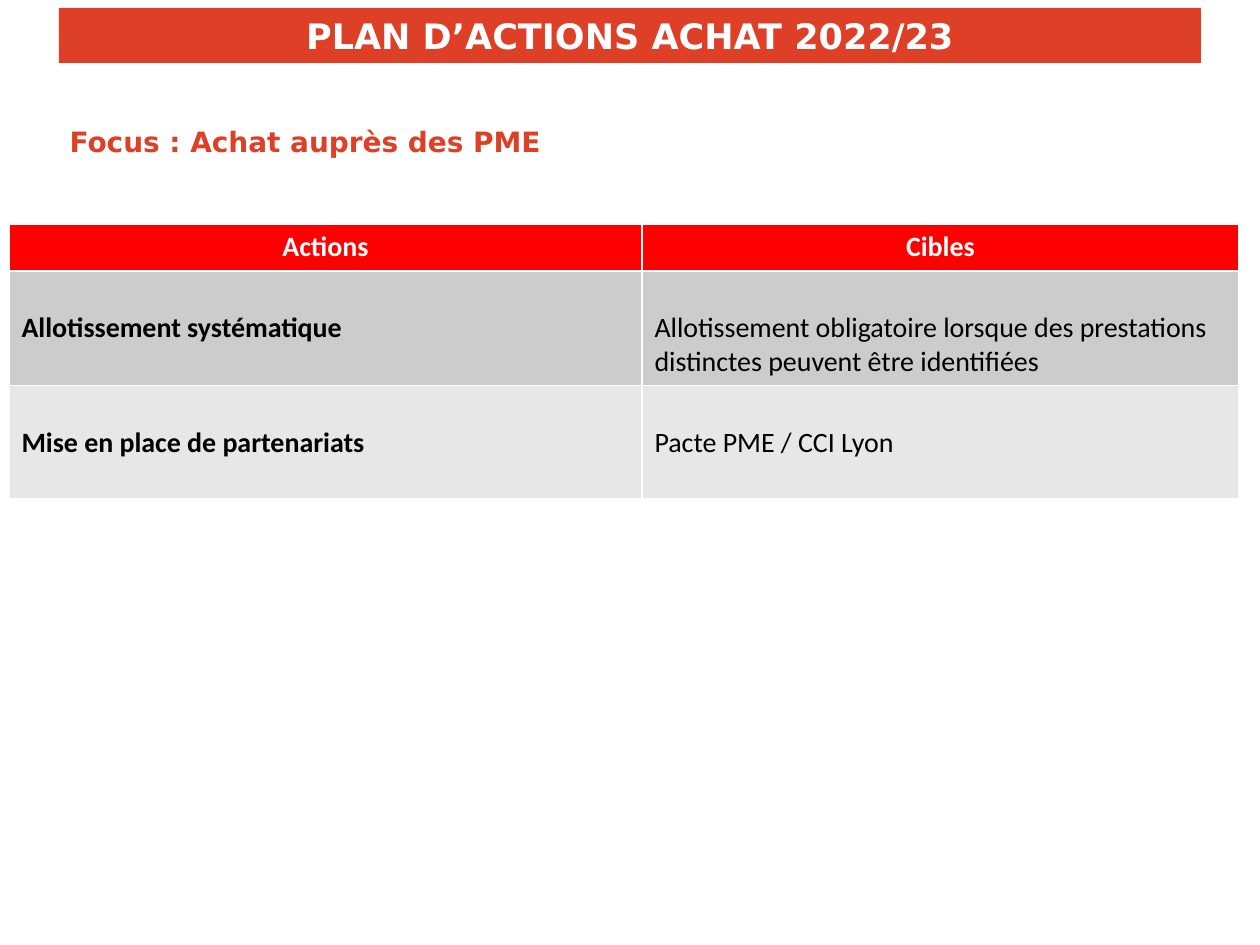
from pptx import Presentation
from pptx import util as u
from pptx.dml.color import RGBColor
from pptx.enum import text
from lxml import etree

# Content
TITLE = "PLAN D’ACTIONS ACHAT 2022/23"
FOCUS = "Focus : Achat auprès des PME"
ACTIONS = [
    ("Actions", "Cibles"),
    ("Allotissement systématique",
     "Allotissement obligatoire lorsque des prestations distinctes peuvent être identifiées"),
    ("Mise en place de partenariats", "Pacte PME / CCI Lyon"),
]

# Layout in px
PX = 914400 // 126
TITLE_BOX = (59, 8, 1142, 55)
FOCUS_BOX = (57, 67, 1134, 100)
FOCUS_OFFSET = 58
TABLE_LEFT, TABLE_TOP = 9, 224
COLUMN_WIDTHS = (633, 597)
ROW_HEIGHTS = (46, 114, 113)
BODY_OFFSET = 40

COLORS = {"brand": "DD4026", "header": "FF0000", "white": "FFFFFF",
          "black": "000000", "odd": "CCCCCC", "even": "E7E7E7"}
ROW_FILLS = ("header", "odd", "even")


def px(length):
    return u.Emu(length * PX)


def color(key):
    return RGBColor.from_string(COLORS[key])


def fill(part, key):
    part.fill.solid()
    part.fill.fore_color.rgb = color(key)


def write(frame, words, key, align, **font_format):
    paragraph = frame.paragraphs[0]
    paragraph.alignment = align
    paragraph.space_before = u.Pt(0)
    run = paragraph.add_run()
    run.text = words
    for name, value in font_format.items():
        setattr(run.font, name, value)
    run.font.color.rgb = color(key)
    return paragraph


def place(part, box):
    for name, length in zip(("left", "top", "width", "height"), box):
        setattr(part, name, px(length))


LEFT, CENTER = text.PP_ALIGN.LEFT, text.PP_ALIGN.CENTER

deck = Presentation()
deck.slide_width, deck.slide_height = px(1260), px(945)
slide = deck.slides.add_slide(deck.slide_layouts[1])
title, focus = slide.placeholders[0], slide.placeholders[1]

# Title band
place(title, TITLE_BOX)
fill(title, "brand")
title.text_frame.vertical_anchor = text.MSO_ANCHOR.MIDDLE
title.text_frame.auto_size = text.MSO_AUTO_SIZE.NONE
write(title.text_frame, TITLE, "white", CENTER,
      name="DejaVu Sans", size=u.Pt(20), bold=True)

# Focus line, without a bullet
place(focus, FOCUS_BOX)
focus.text_frame.margin_top = px(FOCUS_OFFSET)
focus.text_frame.auto_size = text.MSO_AUTO_SIZE.NONE
focus_line = write(focus.text_frame, FOCUS, "brand", LEFT,
                   name="DejaVu Sans", size=u.Pt(16), bold=True)
properties = focus_line._p.get_or_add_pPr()
properties.set("marL", "0")
properties.set("indent", "0")
etree.SubElement(properties, "{http://schemas.openxmlformats.org/drawingml/2006/main}buNone")

# Table of actions
table = slide.shapes.add_table(
    len(ACTIONS), len(COLUMN_WIDTHS), px(TABLE_LEFT), px(TABLE_TOP),
    px(sum(COLUMN_WIDTHS)), px(sum(ROW_HEIGHTS))).table
for column, width in zip(table.columns, COLUMN_WIDTHS):
    column.width = px(width)
for r, (row, height) in enumerate(zip(table.rows, ROW_HEIGHTS)):
    row.height = px(height)
    header = r == 0
    for c, words in enumerate(ACTIONS[r]):
        cell = table.cell(r, c)
        fill(cell, ROW_FILLS[r])
        if not header:
            cell.margin_top = px(BODY_OFFSET)
        write(cell.text_frame, words, "white" if header else "black",
              CENTER if header else LEFT,
              name="Calibri", size=u.Pt(16), bold=header or c == 0)

deck.save("out.pptx")
